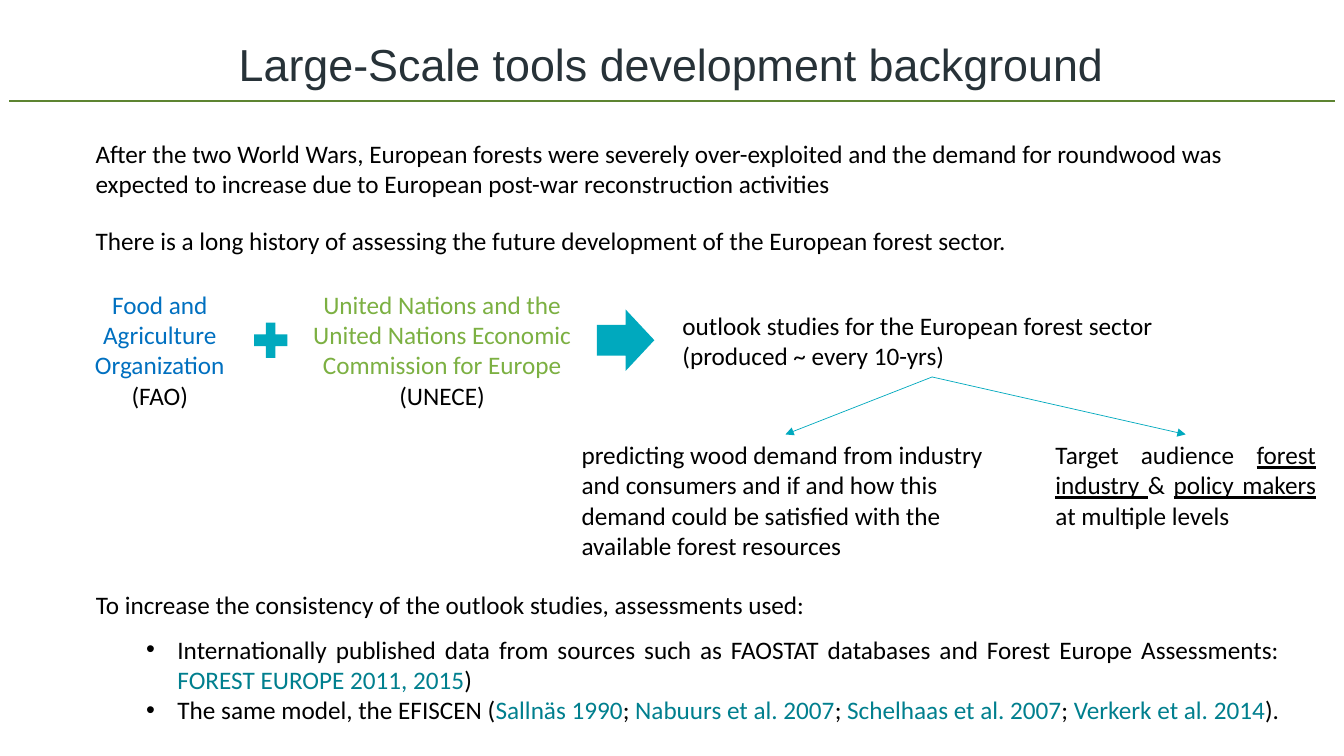
from lxml import etree
from pptx import Presentation
from pptx.dml.color import RGBColor
from pptx.enum.shapes import MSO_CONNECTOR, MSO_SHAPE
from pptx.enum.text import MSO_ANCHOR, MSO_AUTO_SIZE, PP_ALIGN
from pptx.oxml.ns import qn
from pptx.util import Emu, Pt

STRAIGHT = MSO_CONNECTOR.STRAIGHT
RIGHT_ARROW, CROSS = MSO_SHAPE.RIGHT_ARROW, MSO_SHAPE.CROSS
TOP, MIDDLE = MSO_ANCHOR.TOP, MSO_ANCHOR.MIDDLE
NO_AUTOFIT = MSO_AUTO_SIZE.NONE
LEFT, CENTER, JUSTIFY = PP_ALIGN.LEFT, PP_ALIGN.CENTER, PP_ALIGN.JUSTIFY

SCALE = 9144  # EMU per px, 100 px to the inch
BOTTOM_SIDE, TOP_SIDE = 2, 0
COLORS = {
    "text": "000000", "title": "273238", "rule": "5D8431", "accent": "00A9BE",
    "fao": "0070C0", "unece": "7CB042", "citation": "007F8E",
}
TITLE_FONT = {"name": "Arial", "size": Pt(32)}
BODY_FONT = {"name": "Calibri", "size": Pt(18)}


def px(*lengths):
    return [Emu(length * SCALE) for length in lengths]


def rgb(color):
    return RGBColor.from_string(COLORS[color])


def set_attributes(target, values):
    for name, value in values.items():
        setattr(target, name, value)


def place(shape, box):
    set_attributes(shape, dict(zip(("left", "top", "width", "height"), px(*box))))


def write(shape, paragraphs, align=LEFT, font=BODY_FONT, anchor=TOP):
    """Each paragraph is a list of runs: (text, colour, underlined)."""
    frame = shape.text_frame
    set_attributes(frame, {"word_wrap": True, "auto_size": NO_AUTOFIT,
                           "vertical_anchor": anchor})
    for index, runs in enumerate(paragraphs):
        paragraph = frame.add_paragraph() if index else frame.paragraphs[0]
        set_attributes(paragraph, {"alignment": align, "space_before": Pt(0)})
        for text, color, underlined in runs:
            run = paragraph.add_run()
            run.text = text
            set_attributes(run.font, font)
            run.font.color.rgb = rgb(color)
            if underlined:
                run.font.underline = True


def plain(text, color="text"):
    return (text, color, False)


def underlined(text):
    return (text, "text", True)


def add_text(slide, box, paragraphs, align=LEFT):
    shape = slide.shapes.add_textbox(*px(*box))
    write(shape, paragraphs, align)
    return shape


def add_symbol(slide, kind, box):
    shape = slide.shapes.add_shape(kind, *px(*box))
    shape.shadow.inherit = False
    shape.fill.solid()
    shape.fill.fore_color.rgb = rgb("accent")
    shape.line.fill.background()
    return shape


def add_line(slide, start, end, color, width):
    line = slide.shapes.add_connector(STRAIGHT, *px(*start, *end))
    line.line.color.rgb = rgb(color)
    line.line.width = Pt(width)
    etree.SubElement(line._element.spPr, qn("a:effectLst"))
    return line


def add_arrow(slide, source, target):
    arrow = add_line(slide, (0, 0), (1, 1), "accent", 0.5)
    arrow.begin_connect(source, BOTTOM_SIDE)
    arrow.end_connect(target, TOP_SIDE)
    etree.SubElement(arrow.line._get_or_add_ln(), qn("a:tailEnd"), type="triangle")


def set_indent(paragraph, margin, indent, bullet=None):
    properties = paragraph._p.get_or_add_pPr()
    properties.set("marL", str(margin * SCALE))
    properties.set("indent", str(indent * SCALE))
    if bullet:
        etree.SubElement(properties, qn("a:buFont"), typeface="Arial")
        etree.SubElement(properties, qn("a:buChar"), char=bullet)
    else:
        etree.SubElement(properties, qn("a:buNone"))


def fill_assessment_list(body):
    place(body, (85, 580, 1194, 142))
    model_runs = [plain("The same model, the EFISCEN (")]
    studies = ("Sallnäs 1990", "Nabuurs et al. 2007", "Schelhaas et al. 2007",
               "Verkerk et al. 2014")
    for index, study in enumerate(studies):
        if index:
            model_runs.append(plain("; "))
        model_runs.append(plain(study, "citation"))
    model_runs.append(plain(")."))
    write(body, [
        [plain("To increase the consistency of the outlook studies, assessments used:")],
        [plain("Internationally published data from sources such as FAOSTAT databases "
               "and Forest Europe Assessments: "),
         plain("FOREST EUROPE 2011, 2015", "citation"), plain(")")],
        model_runs,
    ], JUSTIFY)
    heading, *items = body.text_frame.paragraphs
    heading.space_after = Pt(10)
    set_indent(heading, 0, 0)
    for item in items:
        item.level = 1
        set_indent(item, 81, -31, "•")


def main():
    presentation = Presentation()
    presentation.slide_width, presentation.slide_height = px(1333, 750)
    slide = presentation.slides.add_slide(presentation.slide_layouts[1])

    # Title and rule
    title = slide.shapes.title
    place(title, (90, 31, 1152, 64))
    write(title, [[plain("Large-Scale tools development background", "title")]],
          CENTER, TITLE_FONT, MIDDLE)
    add_line(slide, (9, 100), (1324, 100), "rule", 1.5)

    # Introduction
    add_text(slide, (85, 132, 1194, 71), [[plain(
        "After the two World Wars, European forests were severely over-exploited and "
        "the demand for roundwood was expected to increase due to European post-war "
        "reconstruction activities")]])
    add_text(slide, (85, 219, 1194, 40), [[plain(
        "There is a long history of assessing the future development of the European "
        "forest sector.")]], JUSTIFY)

    # Organisations leading to the outlook studies
    add_text(slide, (75, 282, 167, 131), [[
        plain("Food and Agriculture Organization ", "fao"), plain("(FAO)")]], CENTER)
    plus = add_symbol(slide, CROSS, (252, 320, 33, 35))
    plus.adjustments[0] = 0.355
    add_text(slide, (298, 282, 281, 131), [[
        plain("United Nations and the United Nations Economic Commission for Europe ",
              "unece"), plain("(UNECE)")]], CENTER)
    add_symbol(slide, RIGHT_ARROW, (592, 307, 57, 61))
    outlook = add_text(slide, (667, 303, 515, 71), [
        [plain("outlook studies for the European forest sector")],
        [plain("(produced ~ every 10-yrs)")]])

    # Purpose and audience of the studies
    purpose = add_text(slide, (567, 431, 424, 131), [[plain(
        "predicting wood demand from industry and consumers and if and how this "
        "demand could be satisfied with the available forest resources")]])
    audience = add_text(slide, (1037, 431, 278, 131), [[
        plain("Target audience "), underlined("forest industry "), plain("& "),
        underlined("policy makers "), plain("at multiple levels")]], JUSTIFY)
    for target in (purpose, audience):
        add_arrow(slide, outlook, target)

    # Assessment inputs
    fill_assessment_list(slide.placeholders[1])

    presentation.save("out.pptx")


if __name__ == "__main__":
    main()
